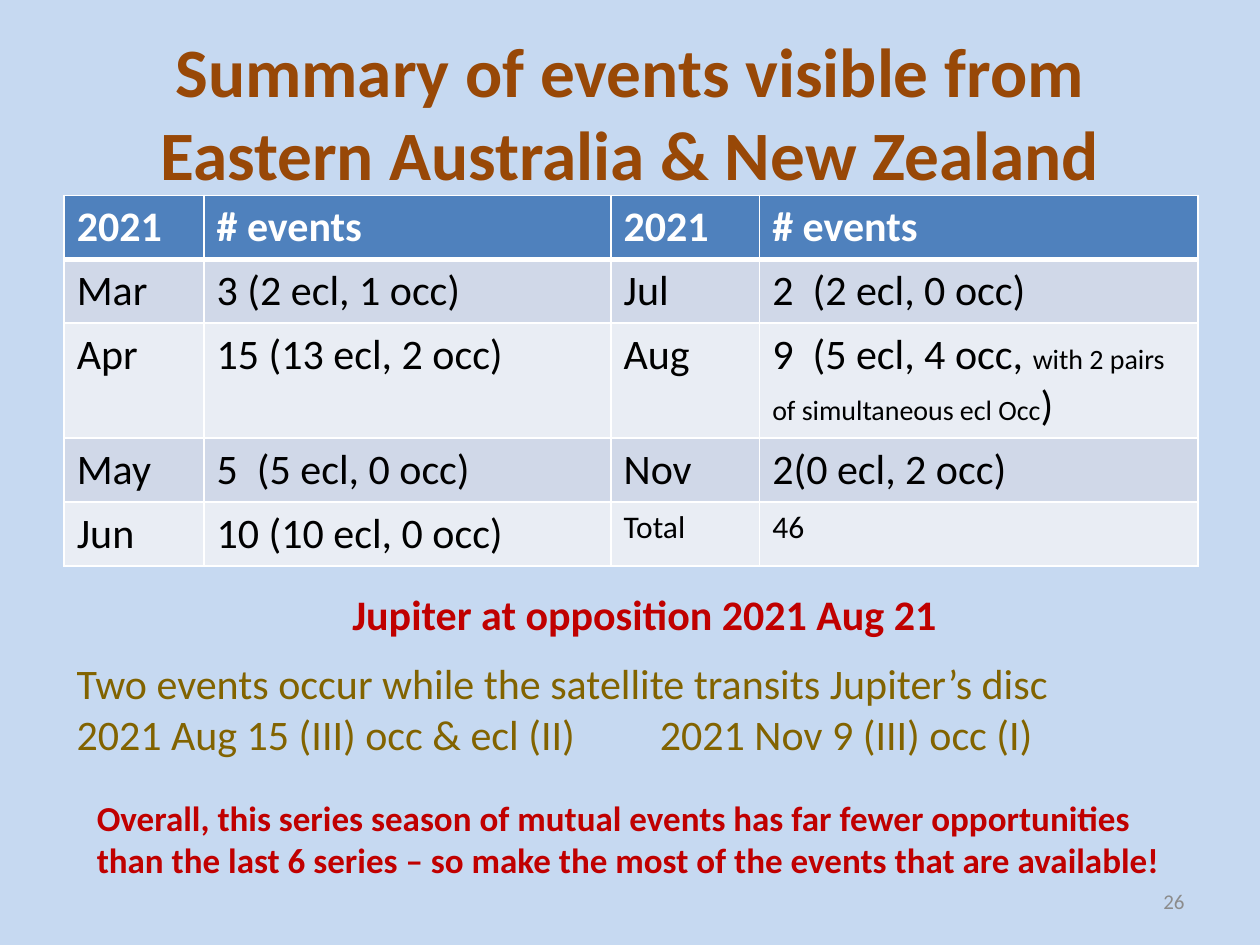
from collections import namedtuple

from lxml.etree import SubElement
from pptx import Presentation
from pptx.dml.color import RGBColor
from pptx.enum.text import MSO_ANCHOR, MSO_AUTO_SIZE, PP_ALIGN
from pptx.oxml import parse_xml
from pptx.oxml.ns import nsdecls, qn
from pptx.util import Inches, Pt

WIDTH, HEIGHT = Inches(10), Inches(7.5)
COLUMN, ROW = WIDTH / 100, HEIGHT / 75
FONT = "Calibri"

SKY = RGBColor(0xC6, 0xD9, 0xF1)
BROWN = RGBColor(0x98, 0x48, 0x07)
BLUE = RGBColor(0x4F, 0x81, 0xBD)
BAND_DARK = RGBColor(0xD0, 0xD8, 0xE8)
BAND_LIGHT = RGBColor(0xE9, 0xED, 0xF4)
OLIVE = RGBColor(0x82, 0x63, 0x00)
RED = RGBColor(0xC0, 0x00, 0x00)
GREY = RGBColor(0x8C, 0x8C, 0x8C)
WHITE = RGBColor(0xFF, 0xFF, 0xFF)
BLACK = RGBColor(0x00, 0x00, 0x00)

Box = namedtuple("Box", "left top width height")

COLUMN_WIDTHS = (11.1, 32.3, 11.8, 34.8)
ROW_HEIGHTS = (5, 5, 9, 5, 5)
EVENTS = (
    ("2021", "# events", "2021", "# events"),
    ("Mar", "3 (2 ecl, 1 occ)", "Jul", "2  (2 ecl, 0 occ)"),
    ("Apr", "15 (13 ecl, 2 occ)", "Aug",
     (("9  (5 ecl, 4 occ, ", 24), ("with 2 pairs of simultaneous ecl Occ", 16), (")", 24))),
    ("May", "5  (5 ecl, 0 occ)", "Nov", "2(0 ecl, 2 occ)"),
    ("Jun", "10 (10 ecl, 0 occ)", (("Total", 18),), (("46", 18),)),
)


def place(box):
    """Turn a box in grid columns and rows into slide lengths."""
    return (round(box.left * COLUMN), round(box.top * ROW),
            round(box.width * COLUMN), round(box.height * ROW))


def write(para, text, size=24, color=BLACK, bold=False, align=PP_ALIGN.LEFT):
    """Add one formatted span of text to a paragraph."""
    para.alignment = align
    span = para.add_run()
    span.text = text
    span.font.name = FONT
    span.font.size = Pt(size)
    span.font.bold = bold
    span.font.color.rgb = color


def add_tab_stop(para, position):
    """Give a paragraph a left tab stop at a grid column."""
    stops = SubElement(para._p.get_or_add_pPr(), qn("a:tabLst"))
    SubElement(stops, qn("a:tab"), pos=str(round(position * COLUMN)), algn="l")


def add_title(page, box, text):
    """Place the slide title in its placeholder."""
    title = page.shapes.title
    title.left, title.top, title.width, title.height = place(box)
    frame = title.text_frame
    frame.auto_size = MSO_AUTO_SIZE.NONE
    frame.vertical_anchor = MSO_ANCHOR.MIDDLE
    write(frame.paragraphs[0], text, size=39.6, color=BROWN, bold=True, align=PP_ALIGN.CENTER)


def add_note(page, box, *lines, anchor=MSO_ANCHOR.TOP, tab=None, **style):
    """Place a wrapped text box with one paragraph for each line."""
    frame = page.shapes.add_textbox(*place(box)).text_frame
    frame.word_wrap = True
    frame.vertical_anchor = anchor
    for index, line in enumerate(lines):
        para = frame.add_paragraph() if index else frame.paragraphs[0]
        write(para, line, **style)
        if tab and "\t" in line:
            add_tab_stop(para, tab)


def set_borders(cell, bottom):
    """Draw white borders round a cell, with its own bottom width."""
    properties = cell._tc.get_or_add_tcPr()
    for index, (side, width) in enumerate((("L", 1), ("R", 1), ("T", 1), ("B", bottom))):
        properties.insert(index, parse_xml(
            f'<a:ln{side} {nsdecls("a")} w="{Pt(width)}"><a:solidFill>'
            f'<a:srgbClr val="{WHITE}"/></a:solidFill></a:ln{side}>'))


def add_events_table(page, box):
    """Place the banded table of monthly event counts."""
    table = page.shapes.add_table(len(EVENTS), len(COLUMN_WIDTHS), *place(box)).table
    for column, width in zip(table.columns, COLUMN_WIDTHS):
        column.width = round(width * COLUMN)
    for row, height in zip(table.rows, ROW_HEIGHTS):
        row.height = round(height * ROW)
    for r, values in enumerate(EVENTS):
        header = r == 0
        for c, value in enumerate(values):
            cell = table.cell(r, c)
            cell.fill.solid()
            cell.fill.fore_color.rgb = BLUE if header else (BAND_LIGHT, BAND_DARK)[r % 2]
            set_borders(cell, bottom=3 if header else 1)
            spans = ((value, 24),) if isinstance(value, str) else value
            for text, size in spans:
                write(cell.text_frame.paragraphs[0], text, size=size,
                      color=WHITE if header else BLACK, bold=header)


def main():
    """Build the event summary slide and save it."""
    deck = Presentation()
    deck.slide_width, deck.slide_height = WIDTH, HEIGHT
    page = deck.slides.add_slide(deck.slide_layouts[5])
    page.background.fill.solid()
    page.background.fill.fore_color.rgb = SKY

    add_title(page, Box(5, 3, 90, 11.7),
              "Summary of events visible from Eastern Australia & New Zealand")
    add_events_table(page, Box(5.1, 15.5, sum(COLUMN_WIDTHS), sum(ROW_HEIGHTS)))
    add_note(page, Box(5.1, 51.7, 90.6, 9.1),
             "Two events occur while the satellite transits Jupiter’s disc",
             "2021 Aug 15 (III) occ & ecl (II)\t2021 Nov 9 (III) occ (I)",
             tab=46.3, color=OLIVE)
    add_note(page, Box(23.2, 46.2, 55.9, 5), "Jupiter at opposition 2021 Aug 21",
             color=RED, bold=True, align=PP_ALIGN.CENTER)
    add_note(page, Box(71.7, 69.5, 23.3, 4), "26", anchor=MSO_ANCHOR.MIDDLE,
             size=12, color=GREY, align=PP_ALIGN.RIGHT)
    add_note(page, Box(6.7, 62.7, 86.6, 7.7),
             "Overall, this series season of mutual events has far fewer opportunities "
             "than the last 6 series – so make the most of the events that are available!",
             size=20, color=RED, bold=True)
    deck.save("out.pptx")


if __name__ == "__main__":
    main()
